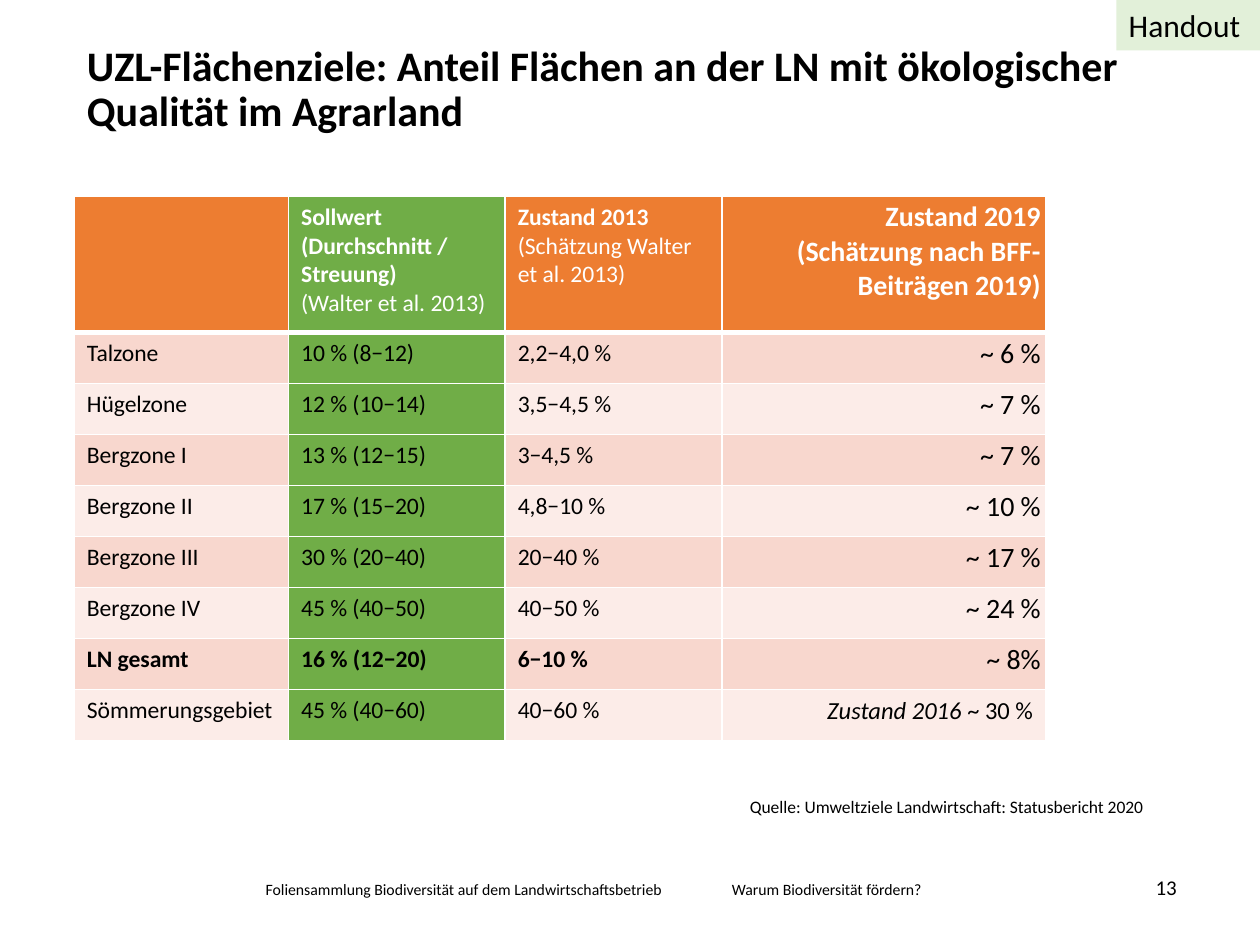
from lxml.etree import SubElement
from pptx import Presentation
from pptx.dml.color import RGBColor
from pptx.enum.shapes import MSO_SHAPE
from pptx.enum.text import MSO_ANCHOR, PP_ALIGN
from pptx.oxml.ns import qn
from pptx.util import Inches, Pt

COLORS = {
    "text": "000000",
    "white": "FFFFFF",
    "header": "ED7D31",
    "target": "70AD47",
    "band_dark": "F8D7CE",
    "band_light": "FCECE8",
    "badge": "E2F0D9",
}
FONT = "Calibri"
HEADERS = [
    [],
    ["Sollwert", "(Durchschnitt /\vStreuung)", "(Walter et al. 2013)"],
    ["Zustand 2013", "(Schätzung Walter et al. 2013)"],
    ["Zustand 2019\v(Schätzung nach BFF-Beiträgen 2019)"],
]
LIGHT_HEADERS = ("(Walter et al. 2013)", "(Schätzung Walter et al. 2013)")
TOTAL_ROW = "LN gesamt"
ZONES = [
    ("Talzone", "10 % (8−12)", "2,2−4,0 %", "~ 6 %"),
    ("Hügelzone", "12 % (10−14)", "3,5−4,5 %", "~ 7 %"),
    ("Bergzone I", "13 % (12−15)", "3−4,5 %", "~ 7 %"),
    ("Bergzone II", "17 % (15−20)", "4,8−10 %", "~ 10 %"),
    ("Bergzone III", "30 % (20−40)", "20−40 %", "~ 17 %"),
    ("Bergzone IV", "45 % (40−50)", "40−50 %", "~ 24 %"),
    (TOTAL_ROW, "16 % (12−20)", "6−10 %", "~ 8%"),
    ("Sömmerungsgebiet", "45 % (40−60)", "40−60 %", "Zustand 2016 "),
]
COLUMN_WIDTHS = [1.7, 1.72, 1.72, 2.57]
TABLE_HEIGHT = 4.32
HEADER_HEIGHT = 1.08
TARGET_COLUMN = 1
ESTIMATE_COLUMN = 3


def color(name):
    return RGBColor.from_string(COLORS[name])


def format_paragraph(paragraph, size, bold=False, ink="text", align=PP_ALIGN.LEFT):
    paragraph.alignment = align
    for run in paragraph.runs:
        run.font.name = FONT
        run.font.size = Pt(size)
        run.font.bold = bold
        run.font.color.rgb = color(ink)


def set_margins(target, horizontal, vertical):
    target.margin_left = target.margin_right = Inches(horizontal)
    target.margin_top = target.margin_bottom = Inches(vertical)


def add_label(slide, box, text, size, bold=False, align=PP_ALIGN.LEFT):
    shape = slide.shapes.add_textbox(*(Inches(length) for length in box))
    frame = shape.text_frame
    frame.word_wrap = True
    frame.text = text
    format_paragraph(frame.paragraphs[0], size, bold, align=align)
    return frame


def add_title(slide, box):
    text = "UZL-Flächenziele: Anteil Flächen an der LN mit ökologischer Qualität im Agrarland"
    frame = add_label(slide, box, text, 24, bold=True)
    set_margins(frame, 0, 0)
    frame.paragraphs[0].line_spacing = 0.9


def add_badge(slide, box):
    shape = slide.shapes.add_shape(MSO_SHAPE.RECTANGLE, *(Inches(length) for length in box))
    shape.shadow.inherit = False
    shape.fill.solid()
    shape.fill.fore_color.rgb = color("badge")
    shape.line.fill.background()
    shape.text_frame.text = "Handout"
    format_paragraph(shape.text_frame.paragraphs[0], 18)


def style_cell(cell, fill, bottom_width=1):
    properties = cell._tc.get_or_add_tcPr()
    for side, width in (("L", 1), ("R", 1), ("T", 1), ("B", bottom_width)):
        line = SubElement(properties, qn(f"a:ln{side}"), w=str(Pt(width)))
        solid = SubElement(line, qn("a:solidFill"))
        SubElement(solid, qn("a:srgbClr"), val=COLORS["white"])
    cell.fill.solid()
    cell.fill.fore_color.rgb = color(fill)


def fill_header(table):
    for column, lines in enumerate(HEADERS):
        cell = table.cell(0, column)
        estimate = column == ESTIMATE_COLUMN
        style_cell(cell, "target" if column == TARGET_COLUMN else "header", 3)
        if estimate:
            set_margins(cell, 0.04, 0.03)
        cell.text_frame.text = "\n".join(lines)
        for paragraph, text in zip(cell.text_frame.paragraphs, lines):
            format_paragraph(paragraph, 16 if estimate else 13.5,
                             text not in LIGHT_HEADERS, "white",
                             PP_ALIGN.RIGHT if estimate else PP_ALIGN.LEFT)


def fill_zones(table):
    for row, values in enumerate(ZONES, 1):
        band = "band_dark" if row % 2 else "band_light"
        last = row == len(ZONES)
        for column, text in enumerate(values):
            cell = table.cell(row, column)
            style_cell(cell, "target" if column == TARGET_COLUMN else band)
            cell.text_frame.text = text
            paragraph = cell.text_frame.paragraphs[0]
            if column != ESTIMATE_COLUMN:
                format_paragraph(paragraph, 13.5, values[0] == TOTAL_ROW)
            elif last:
                paragraph.runs[0].font.italic = True
                paragraph.add_run().text = "~ 30 %"
                format_paragraph(paragraph, 14, align=PP_ALIGN.RIGHT)
            else:
                set_margins(cell, 0.04, 0.03)
                format_paragraph(paragraph, 16, align=PP_ALIGN.RIGHT)


def add_zone_table(slide, box):
    frame = slide.shapes.add_table(len(ZONES) + 1, len(COLUMN_WIDTHS),
                                   *(Inches(length) for length in box))
    table = frame.table
    for column, width in zip(table.columns, COLUMN_WIDTHS):
        column.width = Inches(width)
    row_height = (box[3] - HEADER_HEIGHT) / len(ZONES)
    for index, row in enumerate(table.rows):
        row.height = Inches(row_height if index else HEADER_HEIGHT)
    fill_header(table)
    fill_zones(table)


def add_footer(slide, top):
    add_label(slide, (2.01, top, 3.46, 0.25),
              "Foliensammlung Biodiversität auf dem Landwirtschaftsbetrieb", 9)
    add_label(slide, (5.71, top, 2.28, 0.25), "Warum Biodiversität fördern?", 9)
    number = add_label(slide, (8.47, top - 0.13, 0.87, 0.39), "13", 12, align=PP_ALIGN.RIGHT)
    set_margins(number, 0, 0.05)
    number.vertical_anchor = MSO_ANCHOR.BOTTOM


def main():
    presentation = Presentation()
    presentation.slide_width = Inches(10)
    presentation.slide_height = Inches(7.5)
    slide = presentation.slides.add_slide(presentation.slide_layouts[6])
    add_footer(slide, 6.93)
    add_title(slide, (0.69, 0.36, 8.65, 0.69))
    add_zone_table(slide, (0.59, 1.56, sum(COLUMN_WIDTHS), TABLE_HEIGHT))
    add_label(slide, (5.31, 6.27, 3.86, 0.27),
              "Quelle: Umweltziele Landwirtschaft: Statusbericht 2020", 10, align=PP_ALIGN.RIGHT)
    add_badge(slide, (8.86, 0, 1.14, 0.4))
    presentation.save("out.pptx")


if __name__ == "__main__":
    main()
